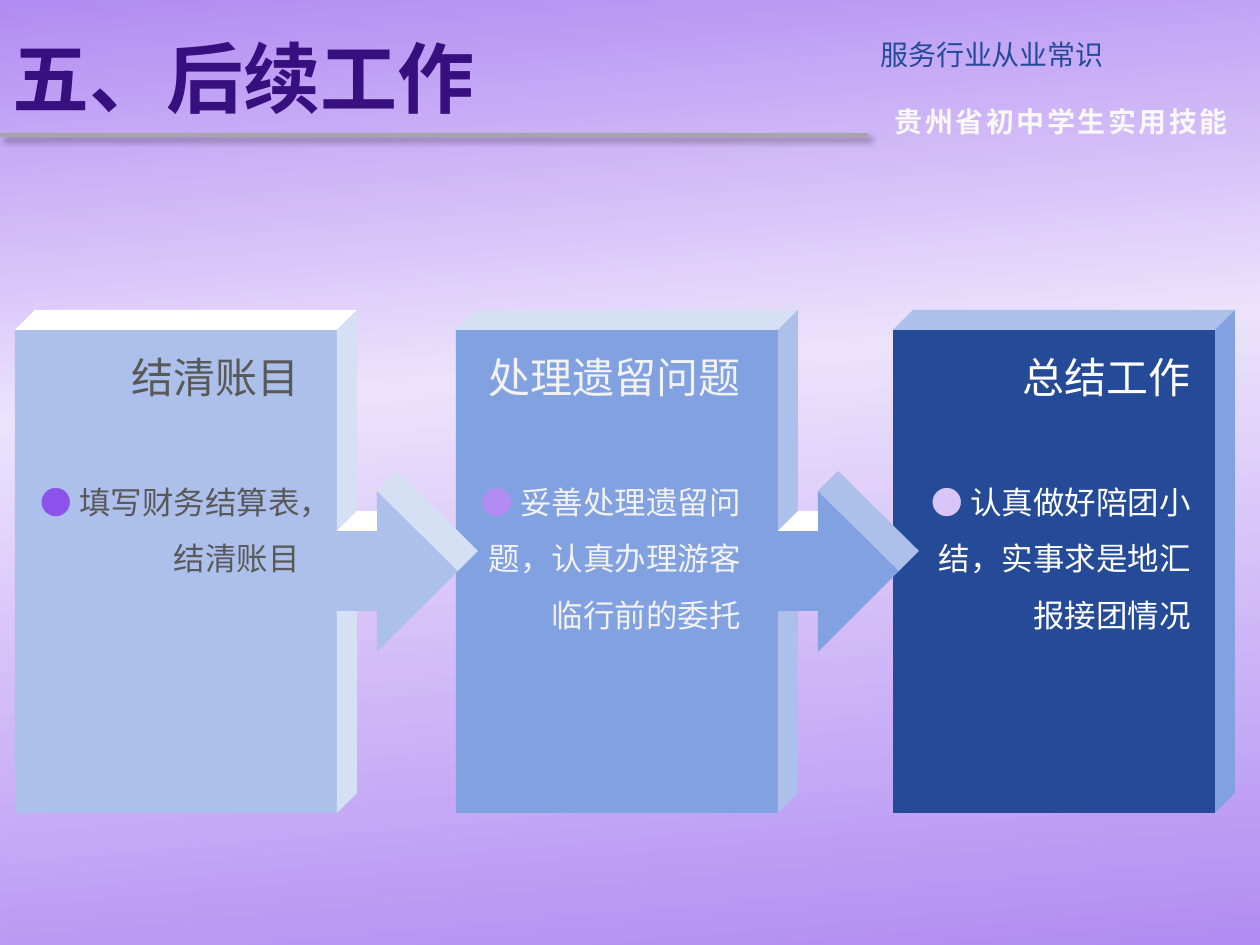
import copy
import dataclasses

import lxml.etree
import pptx
import pptx.dml.color
import pptx.enum.dml
import pptx.enum.shapes
import pptx.enum.text
import pptx.oxml.ns
import pptx.util

ALIGN = pptx.enum.text.PP_ALIGN
ANCHOR = pptx.enum.text.MSO_ANCHOR
SCALE = 914400 / 126
PANEL_TOP, PANEL_WIDTH, PANEL_HEIGHT, DEPTH = 330, 322, 483, 20


@dataclasses.dataclass(frozen=True)
class Theme:
    font: str = "Noto Sans CJK SC"
    bullet_font: str = "Calibri"
    background: tuple = ((0, "B28CF2"), (40, "ECE2FC"), (100, "B28CF2"))
    title: str = "380F7F"
    navy: str = "254A97"
    blue: str = "82A1E1"
    light_blue: str = "ACC0EB"
    pale_blue: str = "D5E0F5"
    white: str = "FFFFFF"
    off_white: str = "F8F8F8"
    light_grey: str = "F2F2F2"
    dark_grey: str = "595959"
    rule: str = "A6A6A6"
    shadow: str = "000000"
    violet: str = "8B53EB"
    lilac: str = "B28CF2"
    pale_lilac: str = "D8C6F8"
    title_size: int = 44
    heading_size: int = 24
    body_size: int = 18
    label_size: int = 16


def emu(px):
    return pptx.util.Emu(round(px * SCALE))


def rgb(value):
    return pptx.dml.color.RGBColor.from_string(value)


def add_element(parent, tag, **attributes):
    return lxml.etree.SubElement(parent, pptx.oxml.ns.qn(tag), attributes)


class SlideBuilder:
    def __init__(self, slide, theme):
        self.slide = slide
        self.theme = theme

    def background(self, angle):
        fill = self.slide.background.fill
        fill.gradient()
        fill.gradient_angle = 360 - angle
        stop_list = self.slide.element.find(".//" + pptx.oxml.ns.qn("a:gsLst"))
        stop_list.append(copy.deepcopy(stop_list[-1]))
        for stop, (position, color) in zip(fill.gradient_stops, self.theme.background):
            stop.position = position / 100
            stop.color.rgb = rgb(color)

    def rule(self, left, right, y):
        connector = self.slide.shapes.add_connector(
            pptx.enum.shapes.MSO_CONNECTOR.STRAIGHT, emu(left), emu(y), emu(right), emu(y))
        connector.line.color.rgb = rgb(self.theme.rule)
        connector.line.width = pptx.util.Pt(2.25)
        effects = add_element(connector.element.spPr, "a:effectLst")
        shadow = add_element(effects, "a:outerShdw", blurRad="50800", dist="38100",
                             dir="2700000", algn="tl", rotWithShape="0")
        color = add_element(shadow, "a:srgbClr", val=self.theme.shadow)
        add_element(color, "a:alpha", val="40000")

    def paint(self, shape, color):
        shape.shadow.inherit = False
        shape.fill.solid()
        shape.fill.fore_color.rgb = rgb(color)
        shape.line.fill.background()

    def polygon(self, group, points, color):
        corners = [(emu(x), emu(y)) for x, y in points]
        builder = group.shapes.build_freeform(*corners[0])
        builder.add_line_segments(corners[1:], close=True)
        self.paint(builder.convert_to_shape(), color)

    def block(self, left, front, top_face, side):
        group = self.slide.shapes.add_group_shape()
        top, right, bottom = PANEL_TOP, left + PANEL_WIDTH, PANEL_TOP + PANEL_HEIGHT
        face = group.shapes.add_shape(
            pptx.enum.shapes.MSO_SHAPE.RECTANGLE,
            emu(left), emu(top), emu(PANEL_WIDTH), emu(PANEL_HEIGHT))
        self.paint(face, front)
        back_top, back_right = top - DEPTH, right + DEPTH
        self.polygon(group, [(left, top), (left + DEPTH, back_top),
                             (back_right, back_top), (right, top)], top_face)
        self.polygon(group, [(back_right, back_top), (back_right, bottom - DEPTH),
                             (right, bottom), (right, top)], side)

    def arrow(self, left, front, side):
        group = self.slide.shapes.add_group_shape()
        middle = PANEL_TOP + PANEL_HEIGHT // 2
        neck, tip = left + 40, left + 121
        shaft_top, shaft_bottom = middle - 40, middle + 40
        head_top, head_bottom = middle - 80, middle + 81
        self.polygon(group, [(left, shaft_bottom), (neck, shaft_bottom), (neck, head_bottom),
                             (tip, middle), (neck, head_top), (neck, shaft_top),
                             (left, shaft_top)], front)
        self.polygon(group, [(neck, head_top), (neck + DEPTH, head_top - DEPTH),
                             (tip + DEPTH, middle - DEPTH), (tip, middle)], side)
        self.polygon(group, [(neck, shaft_top - DEPTH), (left + DEPTH, shaft_top - DEPTH),
                             (left, shaft_top), (neck, shaft_top)], self.theme.white)

    def text_box(self, left, top, width, height, anchor=ANCHOR.TOP):
        text_frame = self.slide.shapes.add_textbox(
            emu(left), emu(top), emu(width), emu(height)).text_frame
        text_frame.word_wrap = True
        text_frame.vertical_anchor = anchor
        return text_frame

    def format_run(self, run, size, color, bold=False, latin=None):
        run.font.size = pptx.util.Pt(size)
        run.font.color.rgb = rgb(color)
        run.font.bold = bold
        run.font.name = latin or self.theme.font
        add_element(run.font._element, "a:ea", typeface=self.theme.font)

    def label(self, box, text, size, color, line_height, align=ALIGN.LEFT,
              bold=False, spacing=0, anchor=ANCHOR.TOP):
        text_frame = self.text_box(*box, anchor)
        text_frame.text = text
        paragraph = text_frame.paragraphs[0]
        paragraph.alignment = align
        paragraph.line_spacing = pptx.util.Pt(line_height)
        run = paragraph.runs[0]
        self.format_run(run, size, color, bold)
        if spacing:
            run.font._element.set("spc", str(spacing))
        return text_frame

    def panel_text(self, left, heading, body, color, bullet_color):
        theme = self.theme
        text_frame = self.label((left, 343, 297, 299), heading, theme.heading_size,
                                color, 30, ALIGN.RIGHT)
        paragraph = text_frame.add_paragraph()
        paragraph.alignment = ALIGN.RIGHT
        paragraph.space_before = pptx.util.Pt(35.5)
        paragraph.line_spacing = pptx.util.Pt(32.4)
        for text, run_color, latin in (("● ", bullet_color, theme.bullet_font),
                                       (body, color, theme.font)):
            run = paragraph.add_run()
            run.text = text
            self.format_run(run, theme.body_size, run_color, latin=latin)


def main():
    theme = Theme()
    presentation = pptx.Presentation()
    presentation.slide_width, presentation.slide_height = emu(1260), emu(945)
    slide = presentation.slides.add_slide(presentation.slide_layouts[6])
    builder = SlideBuilder(slide, theme)

    builder.background(85)
    builder.rule(0, 868, 135)
    builder.label((878, 96, 367, 47), "贵州省初中学生实用技能", theme.label_size,
                  theme.off_white, 20.5, ALIGN.CENTER, bold=True, spacing=150)
    builder.label((868, 29, 392, 47), "服务行业从业常识", theme.label_size,
                  theme.navy, 20.5, ALIGN.JUSTIFY)
    builder.label((0, 6, 868, 129), "五、后续工作", theme.title_size,
                  theme.title, 60, bold=True, anchor=ANCHOR.MIDDLE)

    panels = [
        (893, 906, (theme.navy, theme.light_blue, theme.blue), "总结工作",
         "认真做好陪团小结，实事求是地汇报接团情况", theme.white, theme.pale_lilac),
        (456, 456, (theme.blue, theme.pale_blue, theme.light_blue), "处理遗留问题",
         "妥善处理遗留问题，认真办理游客临行前的委托", theme.light_grey, theme.lilac),
        (15, 15, (theme.light_blue, theme.white, theme.pale_blue), "结清账目",
         "填写财务结算表，结清账目", theme.dark_grey, theme.violet),
    ]
    for index, (left, text_left, faces, heading, body, color, bullet_color) in enumerate(panels):
        front, top_face, side = faces
        builder.block(left, front, top_face, side)
        if index > 0:
            builder.arrow(left + PANEL_WIDTH, front, side)
        builder.panel_text(text_left, heading, body, color, bullet_color)

    presentation.save("out.pptx")


if __name__ == "__main__":
    main()
